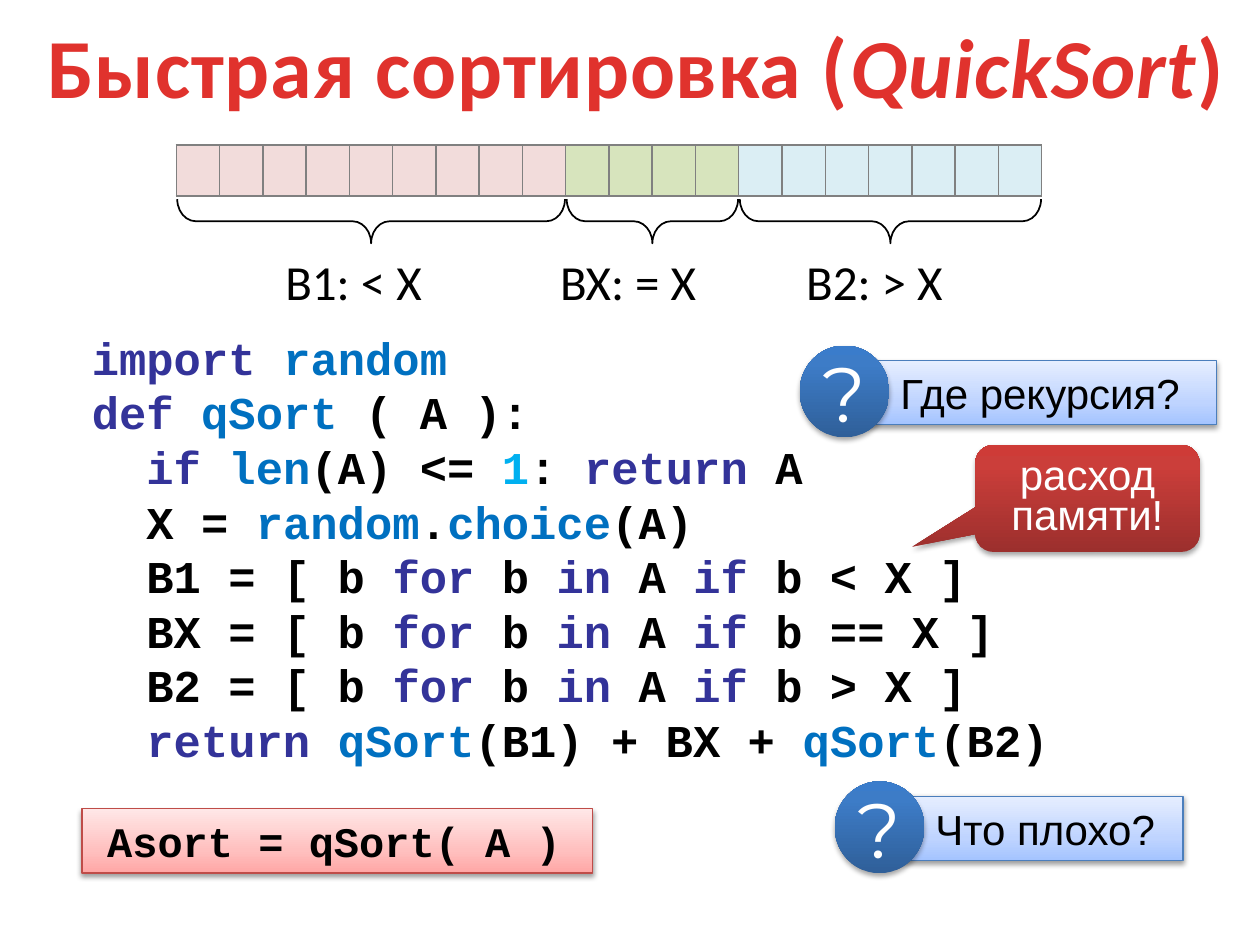
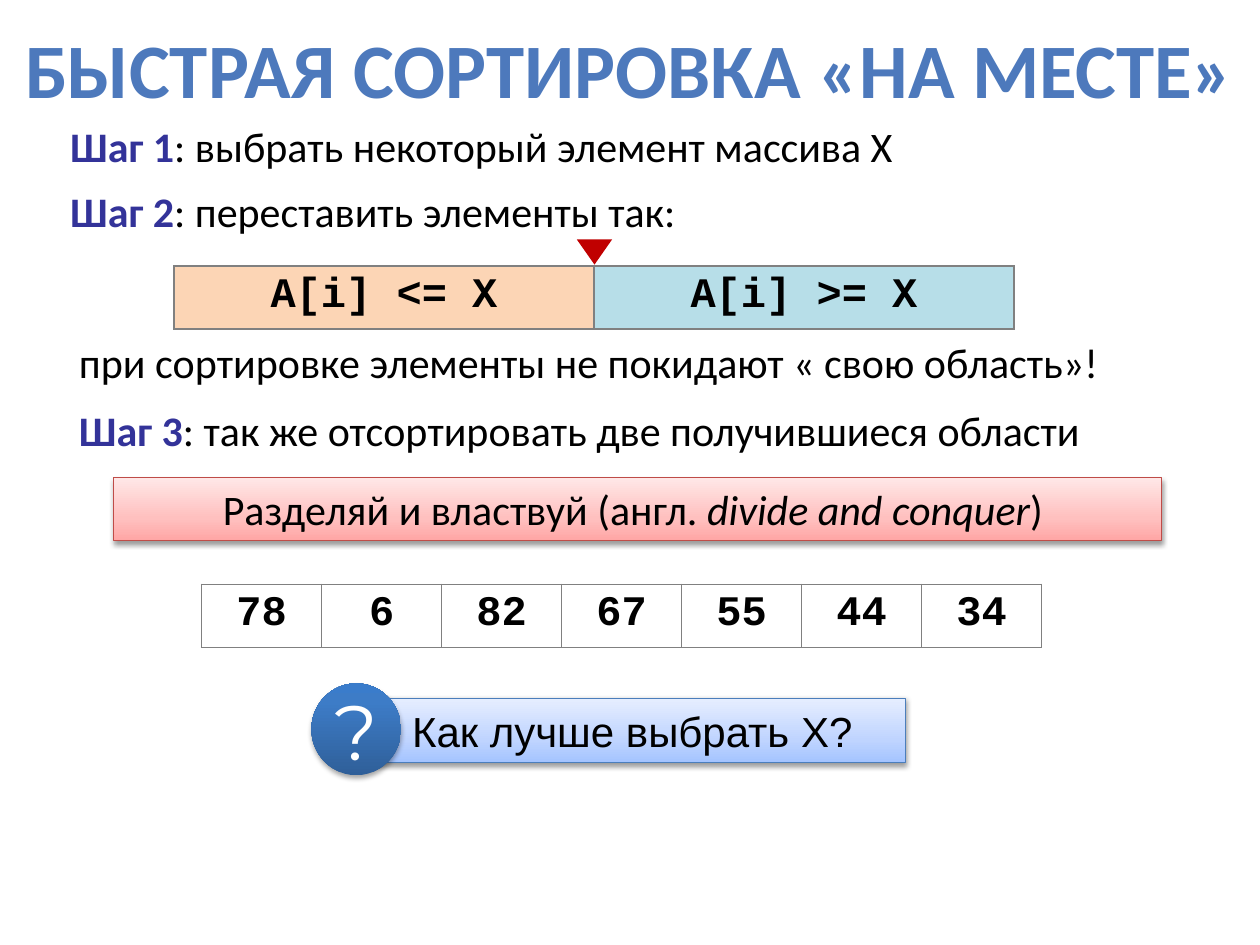
"""Build two slides about the quicksort algorithm."""
from dataclasses import dataclass, field
from typing import NamedTuple

import pptx
import pptx.dml.color
import pptx.enum.shapes
import pptx.enum.text
import pptx.oxml
import pptx.oxml.ns
import pptx.util
from lxml import etree

Pt = pptx.util.Pt
qn = pptx.oxml.ns.qn
SHAPE = pptx.enum.shapes.MSO_SHAPE
ALIGN = pptx.enum.text.PP_ALIGN
ANCHOR = pptx.enum.text.MSO_ANCHOR

COLORS = {
    "black": "000000", "white": "FFFFFF", "border": "808080",
    "red_title": "E0322D", "blue_title": "4D79BC",
    "keyword": "333399", "name": "0070C0", "number": "00B0F0",
    "rose": "F2DCDB", "green": "D7E4BD", "ice": "DBEEF4",
    "peach": "FCD5B5", "aqua": "B7DEE8", "pointer": "C00000",
    "blue_line": "4B7EBC", "red_line": "BF4C48",
}
GRADIENTS = {
    "blue_box": ((0, "A4C4FF"), (35, "BFD4FF"), (100, "E6EEFF")),
    "red_box": ((0, "FFA6A5"), (35, "FFC0BF"), (100, "FFE7E7")),
    "blue_deep": ((0, "2F5F99"), (80, "3D7CC7"), (100, "3A7CCB")),
    "red_deep": ((0, "9C2F2D"), (80, "CB3E3A"), (100, "CE3B37")),
}
TITLE = {"name": "Calibri", "bold": True}
BODY = {"name": "Calibri", "size": Pt(24)}
LABEL = {"name": "Calibri", "size": Pt(28)}
NOTE = {"name": "Arial", "size": Pt(24)}
MONO = {"name": "Courier New", "size": Pt(24), "bold": True}
CODE = MONO | {"size": Pt(26)}
MARK = {"name": "Montserrat", "size": Pt(44)}

CODE_COLORS = (
    dict.fromkeys(("import", "def", "if", "return", "for", "in"), "keyword")
    | dict.fromkeys(("random", "qSort", "len", "choice"), "name")
    | {"1": "number"}
)
CODE_LINES = (
    (0, "import| |random"),
    (0, "def| |qSort| ( A ):"),
    (1, "if| |len|(A) <= |1|: |return| A"),
    (1, "X = |random|.|choice|(A)"),
    *((1, f"{part} = [ b |for| b |in| A |if| b {sign} X ]")
      for part, sign in (("B1", "<"), ("BX", "=="), ("B2", ">"))),
    (1, "return| |qSort|(B1) + BX + |qSort|(B2)"),
)
CODE_INDENT = 31.2


class Box(NamedTuple):
    left: float
    top: float
    width: float
    height: float

    def pts(self) -> list:
        return [Pt(v) for v in self]


class Span(NamedTuple):
    text: str
    color: str = "black"
    fmt: dict = {}


class Part(NamedTuple):
    label: str
    count: int
    fill: str
    label_left: float


class Question(NamedTuple):
    text: str
    bar: Box


class Cell(NamedTuple):
    text: str = ""
    fill: str = "white"


@dataclass
class Panel:
    box: Box
    kind: int
    gradient: str
    line: str = ""
    glow: tuple = (38, 1.6)
    adjust: tuple = field(default=())


PARTS = (
    Part("B1: < X", 9, "rose", 156),
    Part("BX: = X", 4, "green", 313),
    Part("B2: > X", 7, "ice", 453.6),
)
STEPS = (
    (33, 65.5, "Шаг 1", ": выбрать некоторый элемент массива X"),
    (33, 102.2, "Шаг 2", ": переставить элементы так:"),
    (38, 189, "", "при сортировке элементы не покидают « свою область»!"),
    (38, 227.5, "Шаг 3", ": так же отсортировать две получившиеся области"),
)


def rgb(color: str):
    return pptx.dml.color.RGBColor.from_string(COLORS[color])


def put_spans(p, spans, fmt: dict) -> None:
    for span in spans:
        r = p.add_run()
        r.text = span.text
        for key, value in (fmt | span.fmt).items():
            setattr(r.font, key, value)
        r.font.color.rgb = rgb(span.color)


def put_text(sp, spans, fmt: dict, align=ALIGN.LEFT, indent: float = 0,
             anchor=ANCHOR.MIDDLE, wrap: bool = True):
    tf = sp.text_frame
    tf.word_wrap = wrap
    tf.vertical_anchor = anchor
    tf.margin_left = Pt(7.2 + indent)
    p = tf.paragraphs[0]
    p.alignment = align
    put_spans(p, spans, fmt)
    return p


def add_text(s, box: Box, spans, fmt: dict, align=ALIGN.LEFT,
             anchor=ANCHOR.TOP):
    sp = s.shapes.add_textbox(*box.pts())
    put_text(sp, spans, fmt, align, anchor=anchor)
    return sp


def add_panel(shapes, panel: Panel):
    sp = shapes.add_shape(panel.kind, *panel.box.pts())
    for i, value in enumerate(panel.adjust):
        sp.adjustments[i] = value
    sp.fill.gradient()
    sp.fill.gradient_angle = 90
    stops = sp._element.spPr.find(f".//{qn('a:gsLst')}")
    for old in list(stops):
        stops.remove(old)
    for pos, color in GRADIENTS[panel.gradient]:
        gs = etree.SubElement(stops, qn("a:gs"), pos=str(pos * 1000))
        etree.SubElement(gs, qn("a:srgbClr"), val=color)
    if panel.line:
        sp.line.color.rgb = rgb(panel.line)
        sp.line.width = Pt(0.75)
    else:
        sp.line.fill.background()
    sp.shadow.inherit = False
    alpha, dist = panel.glow
    shadow = etree.SubElement(
        sp._element.spPr.find(qn("a:effectLst")), qn("a:outerShdw"),
        blurRad=str(Pt(3.1)), dist=str(Pt(dist)), dir="5400000",
        rotWithShape="0")
    clr = etree.SubElement(shadow, qn("a:srgbClr"), val=COLORS["black"])
    etree.SubElement(clr, qn("a:alpha"), val=str(alpha * 1000))
    return sp


def add_question(s, question: Question) -> None:
    shapes = s.shapes.add_group_shape().shapes
    bar = question.bar
    sp = add_panel(shapes, Panel(bar, SHAPE.RECTANGLE, "blue_box", "blue_line"))
    put_text(sp, [Span(question.text)], NOTE, indent=13.3)
    circle = Box(bar.left - 37, bar.top - 8.5, 51.2, 52.5)
    sp = add_panel(shapes, Panel(circle, SHAPE.OVAL, "blue_deep", glow=(35, 1.8)))
    put_text(sp, [Span("?", "white")], MARK, ALIGN.CENTER, wrap=False)


def add_row(s, box: Box, cells) -> None:
    tbl = s.shapes.add_table(1, len(cells), *box.pts()).table
    tbl.first_row = tbl.horz_banding = False
    tbl.rows[0].height = Pt(box.height)
    for i, item in enumerate(cells):
        tbl.columns[i].width = Pt(box.width / len(cells))
        cell = tbl.cell(0, i)
        for side in "LRTB":
            ln = etree.SubElement(cell._tc.get_or_add_tcPr(),
                                  qn(f"a:ln{side}"), w=str(Pt(1)))
            fill = etree.SubElement(ln, qn("a:solidFill"))
            etree.SubElement(fill, qn("a:srgbClr"), val=COLORS["border"])
        cell.fill.solid()
        cell.fill.fore_color.rgb = rgb(item.fill)
        if item.text:
            p = cell.text_frame.paragraphs[0]
            p.alignment = ALIGN.CENTER
            put_spans(p, [Span(item.text)], MONO)


def add_brace(s, center: float, span: float) -> None:
    depth, middle = 25.2, 126.4
    box = Box(center - depth / 2, middle - span / 2, depth, span)
    sp = s.shapes.add_shape(SHAPE.LEFT_BRACE, *box.pts())
    sp.rotation = 270
    sp.adjustments[0] = 0.42
    sp.fill.background()
    sp.line.color.rgb = rgb("black")
    sp.line.width = Pt(1)
    sp.shadow.inherit = False


def add_code(s) -> None:
    tf = s.shapes.add_textbox(*Box(45.4, 185, 629, 259).pts()).text_frame
    tf.word_wrap = True
    for i, (level, line) in enumerate(CODE_LINES):
        p = tf.add_paragraph() if i else tf.paragraphs[0]
        p._p.get_or_add_pPr().set("marL", str(Pt(level * CODE_INDENT)))
        put_spans(p, [Span(t, CODE_COLORS.get(t, "black"))
                      for t in line.split("|")], CODE)


def build_quicksort(s) -> None:
    left, step = 100.8, 24.73
    cells = [Cell(fill=part.fill) for part in PARTS for _ in range(part.count)]
    add_row(s, Box(left, 82.8, step * len(cells), 29.2), cells)
    for part in PARTS:
        span = part.count * step
        add_brace(s, left + span / 2, span - 1)
        add_text(s, Box(part.label_left, 140.4, 111, 41), [Span(part.label)], LABEL)
        left += span
    add_code(s)
    add_question(s, Question("Что плохо?", Box(514, 455, 162, 36.7)))
    add_question(s, Question("Где рекурсия?", Box(494, 206, 201, 36.7)))
    sp = add_panel(s.shapes, Panel(Box(46.8, 462.2, 291.6, 36.7),
                                   SHAPE.RECTANGLE, "red_box", "red_line"))
    put_text(sp, [Span("Asort = qSort( A )")], MONO, indent=7.2)
    sp = add_panel(s.shapes, Panel(
        Box(557.3, 254.2, 128.2, 61.2), SHAPE.ROUNDED_RECTANGULAR_CALLOUT,
        "red_deep", glow=(35, 1.8), adjust=(-0.78, 0.45, 0.17)))
    p = put_text(sp, [Span("расход памяти!", "white")], NOTE, ALIGN.CENTER)
    p.line_spacing = 0.8
    sp = add_text(s, Box(11.5, 6.5, 703.4, 61.2),
                  [Span("Быстрая сортировка (", "red_title"),
                   Span("QuickSort", "red_title", {"italic": True}),
                   Span(")", "red_title")],
                  TITLE | {"size": Pt(48)}, ALIGN.CENTER, ANCHOR.MIDDLE)
    for r in sp.text_frame.paragraphs[0].runs:
        r._r.get_or_add_rPr().set("spc", "50")


def build_in_place(s) -> None:
    add_text(s, Box(0, 16.6, 720, 44),
             [Span("БЫСТРАЯ СОРТИРОВКА «НА МЕСТЕ»", "blue_title")],
             TITLE | {"size": Pt(44)}, ALIGN.CENTER, ANCHOR.MIDDLE)
    for left, top, step, rest in STEPS:
        head = [Span(step, "keyword", {"bold": True})] if step else []
        add_text(s, Box(left, top, 660, 36.7), [*head, Span(rest)], BODY)
    add_row(s, Box(99.4, 151.9, 480, 36),
            [Cell("A[i] <= X", "peach"), Cell("A[i] >= X", "aqua")])
    sp = add_panel(s.shapes, Panel(Box(64.8, 272.9, 599, 36),
                                   SHAPE.RECTANGLE, "red_box", "red_line"))
    put_text(sp, [Span("Разделяй и властвуй (англ. "),
                  Span("divide and conquer", fmt={"italic": True}),
                  Span(") ")], BODY, ALIGN.CENTER)
    sp = s.shapes.add_shape(SHAPE.ISOSCELES_TRIANGLE,
                            *Box(329.6, 136.8, 20.2, 14.4).pts())
    sp.rotation = 180
    sp.fill.solid()
    sp.fill.fore_color.rgb = rgb("pointer")
    sp.line.fill.background()
    sp.shadow.inherit = False
    add_row(s, Box(115.2, 333.9, 480, 36),
            [Cell(str(n)) for n in (78, 6, 82, 67, 55, 44, 34)])
    add_question(s, Question("Как лучше выбрать X?", Box(215, 399, 302.4, 36.7)))


def main() -> None:
    prs = pptx.Presentation()
    prs.slide_width, prs.slide_height = Pt(720), Pt(540)
    for build in (build_quicksort, build_in_place):
        build(prs.slides.add_slide(prs.slide_layouts[6]))
    prs.save("out.pptx")


if __name__ == "__main__":
    main()
